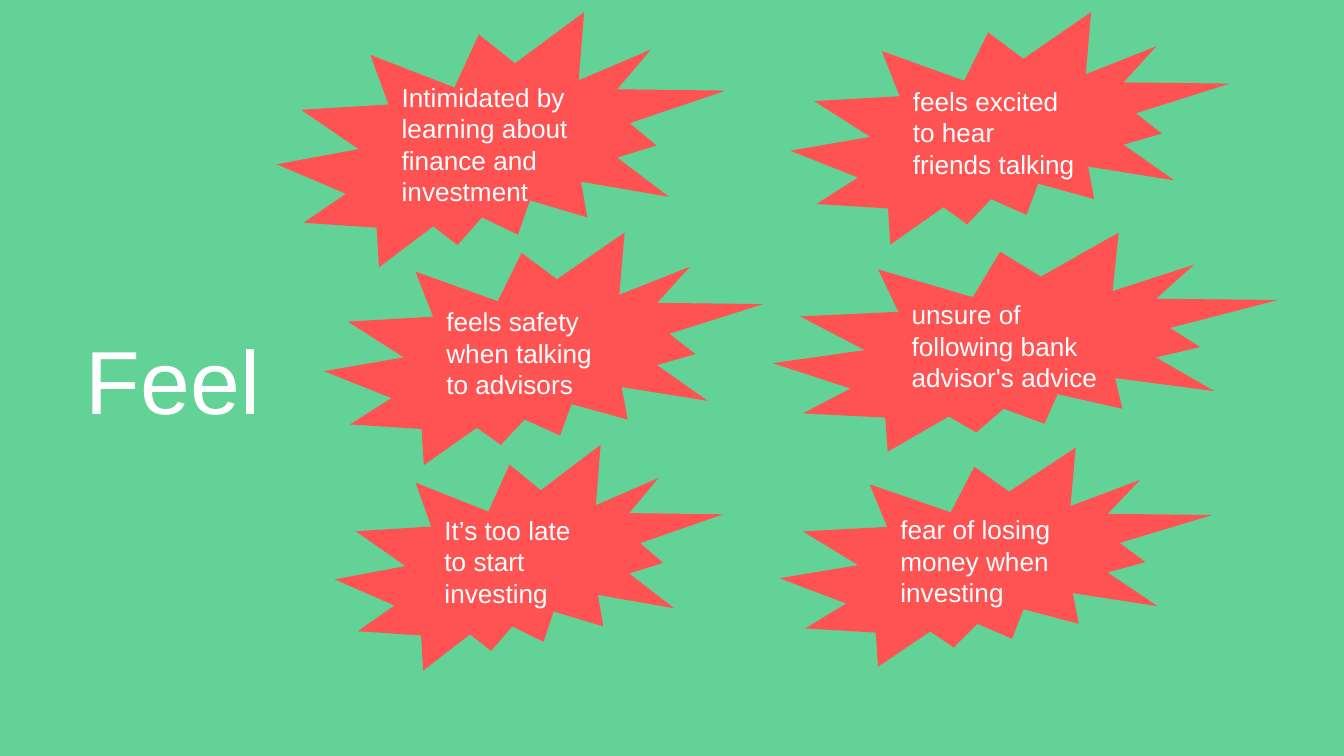
from dataclasses import dataclass

from pptx import Presentation
from pptx.dml.color import RGBColor
from pptx.enum import shapes, text
from pptx.util import Pt

GREEN = RGBColor(0x63, 0xD2, 0x97)
RED = RGBColor(0xFF, 0x52, 0x52)
WHITE = RGBColor(0xFF, 0xFF, 0xFF)
INSET = Pt(7.2)


@dataclass
class Burst:
    words: str
    left: float
    top: float
    width: float
    height: float


BURSTS = [
    Burst("Intimidated by learning about finance and investment", 148.3, 6.5, 240.5, 136.8),
    Burst("feels excited to hear friends talking", 423.4, 6.5, 235.4, 124.6),
    Burst("It’s too late to start investing", 179.3, 238.3, 208.1, 121),
    Burst("fear of losing money when investing", 417.6, 239.8, 231.8, 117.4),
    Burst("feels safety when talking to advisors", 173.5, 124.6, 235.4, 124.6),
    Burst("unsure of following bank advisor's advice", 414, 124.6, 270.7, 117.4),
]


def write(shape, words: str, size: float) -> None:
    frame = shape.text_frame
    frame.word_wrap = True
    frame.vertical_anchor = text.MSO_ANCHOR.MIDDLE
    frame.margin_left = frame.margin_right = INSET
    frame.margin_top = frame.margin_bottom = INSET
    para = frame.paragraphs[0]
    para.text = words
    para.alignment = text.PP_ALIGN.LEFT
    para.font.name = "Arial"
    para.font.size = Pt(size)
    para.font.color.rgb = WHITE


def draw(slide, burst: Burst) -> None:
    shape = slide.shapes.add_shape(
        shapes.MSO_SHAPE.EXPLOSION2,
        Pt(burst.left), Pt(burst.top), Pt(burst.width), Pt(burst.height))
    shape.shadow.inherit = False
    shape.fill.solid()
    shape.fill.fore_color.rgb = RED
    shape.line.fill.background()
    write(shape, burst.words, 14)


def main() -> None:
    deck = Presentation()
    deck.slide_width, deck.slide_height = Pt(720), Pt(405)
    slide = deck.slides.add_slide(deck.slide_layouts[6])
    slide.background.fill.solid()
    slide.background.fill.fore_color.rgb = GREEN
    title = slide.shapes.add_textbox(Pt(38.9), Pt(41.8), Pt(113.8), Pt(321.8))
    write(title, "Feel", 48)
    for burst in BURSTS:
        draw(slide, burst)
    deck.save("out.pptx")


if __name__ == "__main__":
    main()
